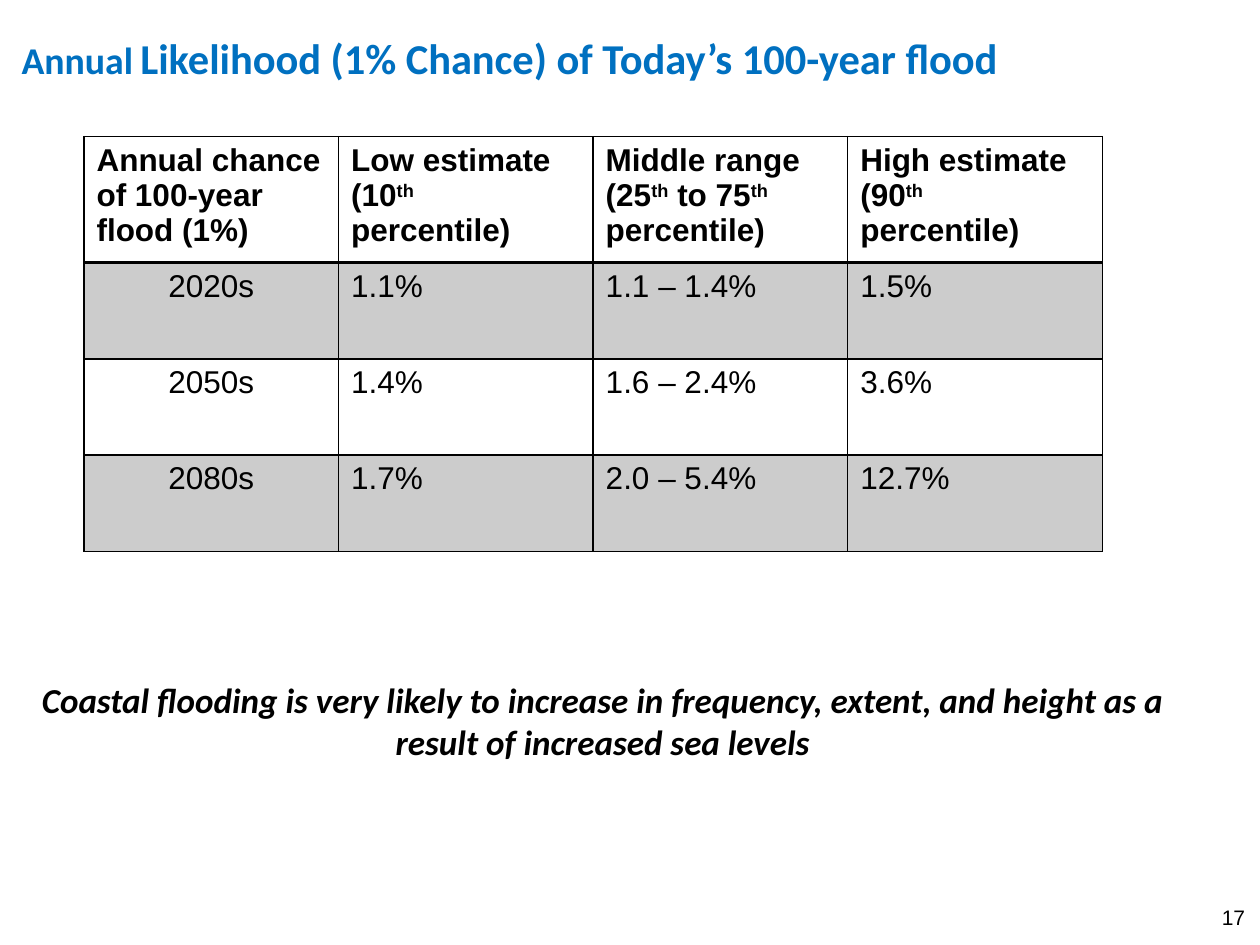
from lxml import etree
from pptx import Presentation
from pptx.dml.color import RGBColor
from pptx.enum.text import MSO_ANCHOR, PP_ALIGN
from pptx.oxml.ns import qn
from pptx.util import Pt

LEFT, CENTER, RIGHT = PP_ALIGN.LEFT, PP_ALIGN.CENTER, PP_ALIGN.RIGHT
MIDDLE = MSO_ANCHOR.MIDDLE
BLACK, WHITE, GRAY, BLUE = "000000", "FFFFFF", "CCCCCC", "0070C0"


def add_run(para, text, size, font="Calibri", color=BLACK, bold=False):
    run = para.add_run()
    run.text = text
    run.font.size = Pt(size)
    run.font.name = font
    run.font.bold = bold
    run.font.color.rgb = RGBColor.from_string(color)
    return run


def add_box(left, top, width, height, pads, align):
    """Add a text box with pads (left, top, right, bottom); return its frame."""
    box = slide.shapes.add_textbox(Pt(left), Pt(top), Pt(width), Pt(height))
    frame = box.text_frame
    frame.word_wrap = True
    frame.margin_left, frame.margin_top, frame.margin_right, frame.margin_bottom = map(Pt, pads)
    frame.paragraphs[0].alignment = align
    return frame


prs = Presentation()
prs.slide_width, prs.slide_height = Pt(720), Pt(540)
slide = prs.slides.add_slide(prs.slide_layouts[6])

# Title
frame = add_box(0, 22.5, 711, 24.5, (12.3, 0, 0, 0), LEFT)
frame.vertical_anchor = MIDDLE
para = frame.paragraphs[0]
para.line_spacing = 0.9
for text, size in (
    ("Annual", 21.6),
    (" ", 18),
    ("Likelihood (1% Chance) of Today’s 100-year flood", 24.3),
):
    add_run(para, text, size, color=BLUE, bold=True)

# Page number
frame = add_box(692.5, 517, 19, 14.5, (0, 0, 0, 0), RIGHT)
add_run(frame.paragraphs[0], "17", 12, "Arial")

# Takeaway
frame = add_box(0, 384, 696, 55.5, (0, 3.6, 7.2, 3.6), CENTER)
note = add_run(
    frame.paragraphs[0],
    "Coastal flooding is very likely to increase in frequency, extent, "
    "and height as a result of increased sea levels",
    20, bold=True,
)
note.font.italic = True

# Flood table: "^" sets off the raised parts of a heading
rows = [
    ["Annual chance of 100-year flood (1%)", "Low estimate (10^th^ percentile)",
     "Middle range (25^th^ to 75^th^ percentile)", "High estimate (90^th^ percentile)"],
    ["2020s", "1.1%", "1.1 – 1.4%", "1.5%"],
    ["2050s", "1.4%", "1.6 – 2.4%", "3.6%"],
    ["2080s", "1.7%", "2.0 – 5.4%", "12.7%"],
]
table = slide.shapes.add_table(4, 4, Pt(48), Pt(78), Pt(582), Pt(237)).table
for col in table.columns:
    col.width = Pt(145.5)
for r, texts in enumerate(rows):
    table.rows[r].height = Pt(55 if r else 72)
    for c, text in enumerate(texts):
        cell = table.cell(r, c)
        cell.fill.solid()
        cell.fill.fore_color.rgb = RGBColor.from_string(GRAY if r % 2 else WHITE)
        para = cell.text_frame.paragraphs[0]
        para.alignment = CENTER if r and c == 0 else LEFT
        for i, part in enumerate(text.split("^")):
            run = add_run(para, part, 18, "Arial", bold=r == 0)
            if i % 2:
                run.font._element.set("baseline", "30000")
        props = cell._tc.get_or_add_tcPr()
        for i, side in enumerate("LRTB"):
            thick = (r, side) in ((0, "B"), (1, "T"))
            line = etree.Element(qn("a:ln" + side), w=str(Pt(2 if thick else 1)))
            paint = etree.SubElement(line, qn("a:solidFill"))
            etree.SubElement(paint, qn("a:srgbClr"), val=BLACK)
            props.insert(i, line)

prs.save("out.pptx")
